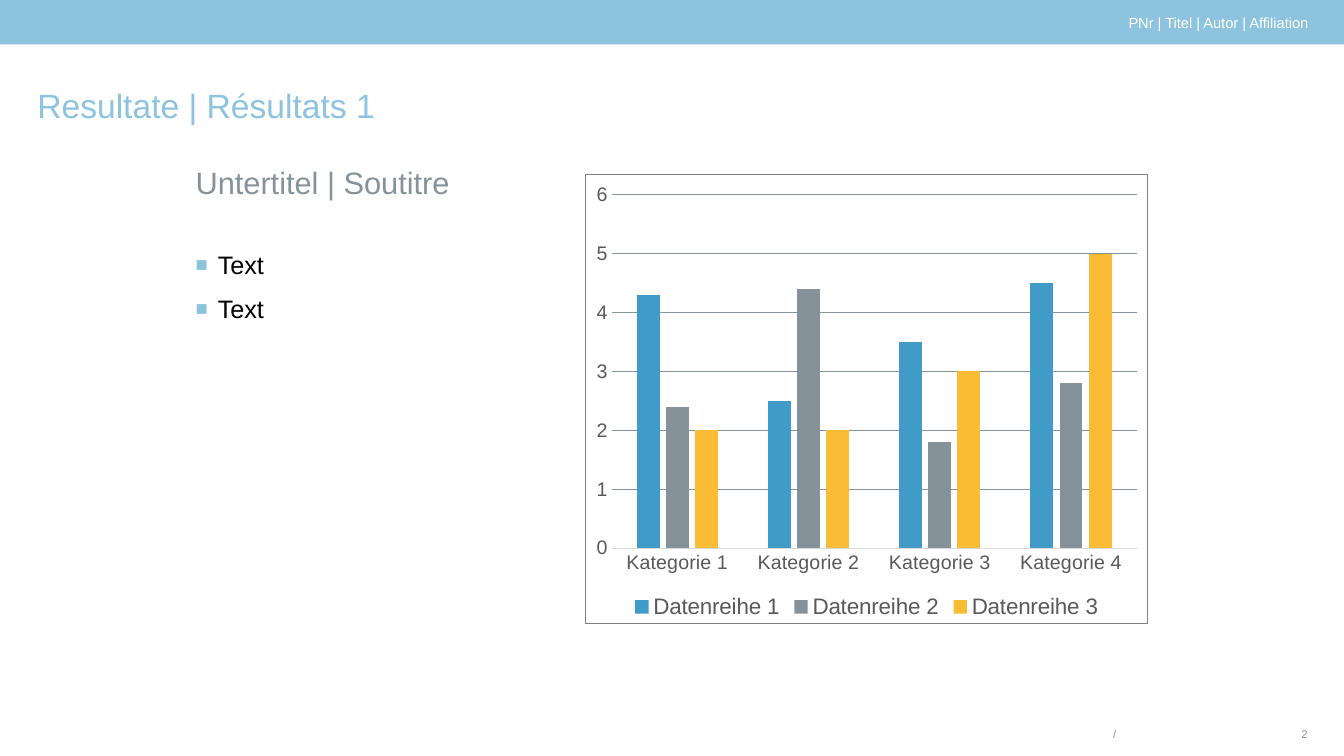
"""Builds a results slide with a bulleted text and a clustered column chart."""
from lxml import etree
from pptx import Presentation
from pptx.chart.data import CategoryChartData
from pptx.dml.color import RGBColor
from pptx.enum.chart import XL_CHART_TYPE as CT, XL_LEGEND_POSITION as LP, XL_TICK_MARK as TM
from pptx.enum.shapes import MSO_SHAPE
from pptx.enum.text import MSO_ANCHOR as VA, MSO_AUTO_SIZE, PP_ALIGN as AL
from pptx.oxml import parse_xml
from pptx.oxml.ns import nsdecls, qn
from pptx.util import Pt

PX = 9144
FONT = "Arial"
COLORS = {"sky": "8DC3DF", "blue": "419BC9", "grey": "86929A", "amber": "FABC34",
          "label": "595959", "axis": "D9D9D9", "border": "808080",
          "black": "000000", "white": "FFFFFF"}

SLIDE = (1333, 750)
BANNER = (0, 0, 1333, 44)
TITLE = ("Resultate | Résultats 1", (37, 84, 1260, 61), 24, "sky")
TEXTS = [
    ("Untertitel | Soutitre", (194, 162, 465, 37), 22, "grey", AL.LEFT, VA.TOP),
    ("PNr | Titel | Autor | Affiliation", (728, 13, 570, 18), 10.5, "white", AL.RIGHT, VA.MIDDLE),
    ("/", (1104, 722, 3, 13), 8, "grey", AL.LEFT, VA.MIDDLE),
    ("2", (1265, 722, 32, 13), 8, "grey", AL.RIGHT, VA.MIDDLE),
]
BULLETS = ("Text\nText", (194, 244, 307, 79), 18, "black")
INDENT = 22
CHART_BOX = (580, 173, 559, 446)
CATEGORIES = ["Kategorie 1", "Kategorie 2", "Kategorie 3", "Kategorie 4"]
SERIES = [
    ("Datenreihe 1", (4.3, 2.5, 3.5, 4.5), "blue"),
    ("Datenreihe 2", (2.4, 4.4, 1.8, 2.8), "grey"),
    ("Datenreihe 3", (2, 2, 3, 5), "amber"),
]


def emu(box):
    return [v * PX for v in box]


def rgb(name):
    return RGBColor.from_string(COLORS[name])


def set_font(font, size, color):
    font.name, font.size = FONT, Pt(size)
    font.color.rgb = rgb(color)


def set_line(line, color):
    line.color.rgb = rgb(color)
    line.width = Pt(0.75)


def write(sp, text, size, color, align=AL.LEFT, anchor=VA.TOP):
    tf = sp.text_frame
    tf.text = text
    tf.word_wrap = True
    tf.auto_size = MSO_AUTO_SIZE.NONE
    tf.vertical_anchor = anchor
    tf.margin_left = tf.margin_top = tf.margin_right = tf.margin_bottom = 0
    for p in tf.paragraphs:
        p.alignment = align
        set_font(p.font, size, color)
    return tf


def add_bullet(p):
    p.line_spacing, p.space_after = 1.1, Pt(8)
    pPr = p._p.get_or_add_pPr()
    pPr.set("marL", str(INDENT * PX))
    pPr.set("indent", str(-INDENT * PX))
    bullet = parse_xml(
        f'<a:pPr {nsdecls("a")}><a:buClr><a:srgbClr val="{COLORS["sky"]}"/></a:buClr>'
        f'<a:buSzPct val="80000"/><a:buFont typeface="{FONT}"/><a:buChar char="■"/></a:pPr>')
    place = pPr.index(pPr.find(qn("a:defRPr")))
    pPr[place:place] = list(bullet)


def add_results_chart(s):
    data = CategoryChartData()
    data.categories = CATEGORIES
    for name, values, _ in SERIES:
        data.add_series(name, values)
    chart = s.shapes.add_chart(CT.COLUMN_CLUSTERED, *emu(CHART_BOX), data).chart
    chart.has_title = False
    set_font(chart.font, 10, "black")

    plot = chart.plots[0]
    plot.gap_width, plot.overlap, plot.vary_by_categories = 219, -27, False
    for series, (_, _, color) in zip(plot.series, SERIES):
        series.format.fill.solid()
        series.format.fill.fore_color.rgb = rgb(color)

    for axis in (chart.category_axis, chart.value_axis):
        axis.major_tick_mark = axis.minor_tick_mark = TM.NONE
        set_font(axis.tick_labels.font, 14, "label")
    set_line(chart.category_axis.format.line, "axis")
    values = chart.value_axis
    values.minimum_scale, values.maximum_scale, values.major_unit = 0, 6, 1
    values.format.line.fill.background()
    set_line(values.major_gridlines.format.line, "grey")

    chart.has_legend = True
    chart.legend.position = LP.BOTTOM
    chart.legend.include_in_layout = False
    set_font(chart.legend.font, 16, "label")

    border = parse_xml(
        f'<c:spPr {nsdecls("c", "a")}><a:noFill/><a:ln w="{Pt(0.75)}"><a:solidFill>'
        f'<a:srgbClr val="{COLORS["border"]}"/></a:solidFill></a:ln></c:spPr>')
    chart._chartSpace.find(qn("c:chart")).addnext(border)


def main():
    prs = Presentation()
    prs.slide_width, prs.slide_height = emu(SLIDE)
    s = prs.slides.add_slide(prs.slide_layouts[5])

    banner = s.shapes.add_shape(MSO_SHAPE.RECTANGLE, *emu(BANNER))
    banner.shadow.inherit = False
    banner.fill.solid()
    banner.fill.fore_color.rgb = rgb("sky")
    banner.line.fill.background()

    text, box, size, color = TITLE
    title = s.shapes.title
    title.left, title.top, title.width, title.height = emu(box)
    write(title, text, size, color)

    for text, box, *style in TEXTS:
        write(s.shapes.add_textbox(*emu(box)), text, *style)

    text, box, *style = BULLETS
    for p in write(s.shapes.add_textbox(*emu(box)), text, *style).paragraphs:
        add_bullet(p)

    add_results_chart(s)
    prs.save("out.pptx")


if __name__ == "__main__":
    main()
